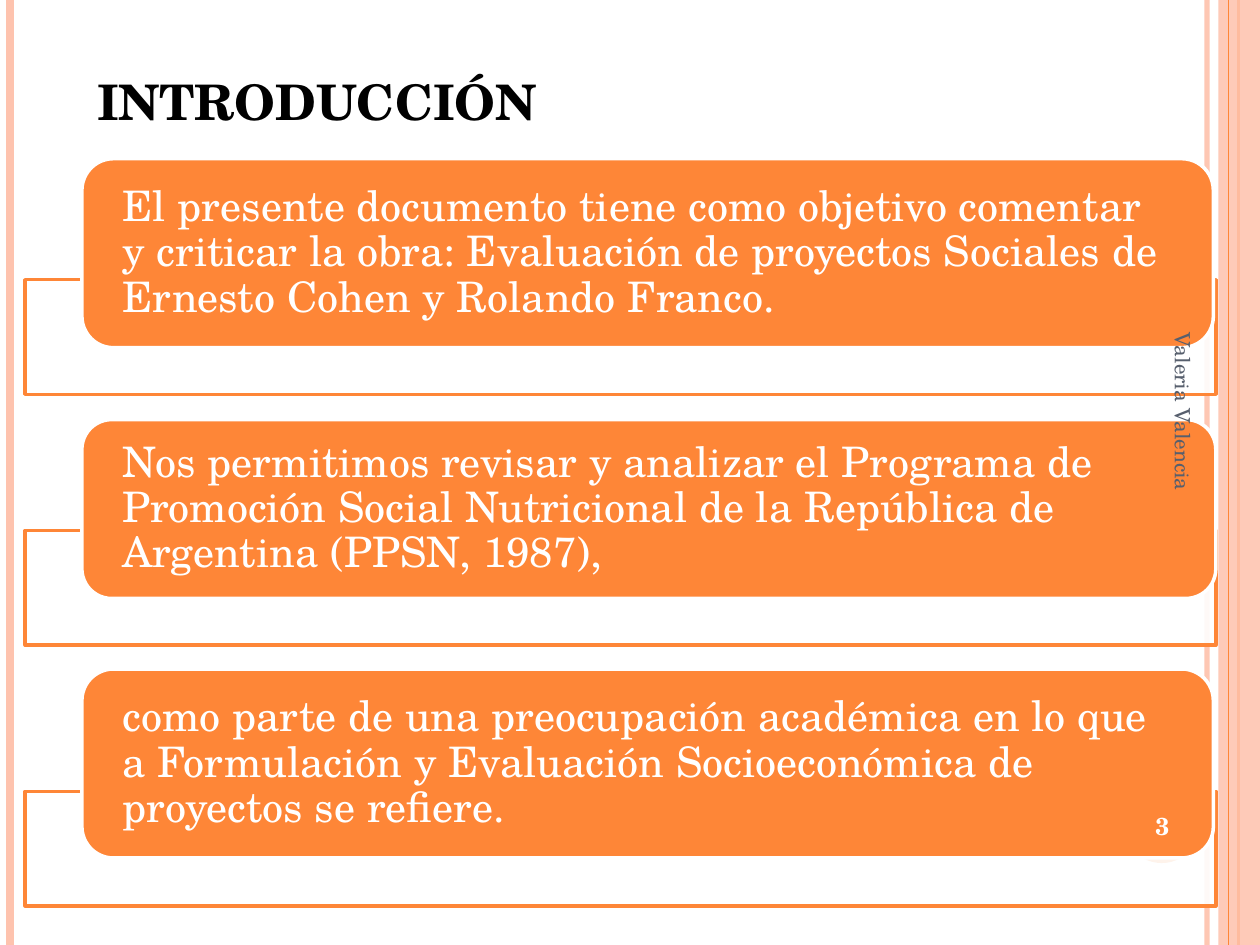
from typing import NamedTuple

from lxml.etree import SubElement
from pptx import Presentation
from pptx.dml.color import RGBColor
from pptx.enum.shapes import MSO_CONNECTOR, MSO_SHAPE
from pptx.enum.text import MSO_ANCHOR, PP_ALIGN
from pptx.oxml.ns import qn
from pptx.util import Inches, Pt

FONT = "TeX Gyre Schola"
ORANGE = RGBColor(0xFE, 0x86, 0x37)
PEACH = RGBColor(0xFE, 0xC3, 0xAE)
WHITE = RGBColor(0xFF, 0xFF, 0xFF)
BLACK = RGBColor(0, 0, 0)
SLATE = RGBColor(0x57, 0x5F, 0x6D)


class Rule(NamedTuple):
    x: float
    color: RGBColor
    width: float
    opacity: int = 100


class Statement(NamedTuple):
    frame_top: float
    left: float
    top: float
    width: float
    height: float
    text: str


RULES = [
    Rule(9.58, PEACH, 3, 93),
    Rule(0.08, PEACH, 4.5),
    Rule(9.83, ORANGE, 1.5),
]
INNER_RULE = Rule(9.75, ORANGE, 0.75)

STATEMENTS = [
    Statement(2.22, 0.65, 1.26, 8.98, 1.5,
              "El presente documento tiene como objetivo comentar y criticar la obra: "
              "Evaluación de proyectos Sociales de Ernesto Cohen y Rolando Franco."),
    Statement(4.21, 0.65, 3.33, 9, 1.42,
              "Nos permitimos revisar y analizar el Programa de Promoción Social "
              "Nutricional de la República de Argentina (PPSN, 1987),"),
    Statement(6.28, 0.65, 5.31, 8.98, 1.5,
              "como parte de una preocupación académica en lo que a Formulación y "
              "Evaluación Socioeconómica de proyectos se refiere."),
]


def set_opacity(element, percent: int) -> None:
    """Add an alpha value to the first solid colour inside an element."""
    color = element.find(".//" + qn("a:srgbClr"))
    SubElement(color, qn("a:alpha"), val=str(percent * 1000))


def add_rule(slide, rule: Rule) -> None:
    connector = slide.shapes.add_connector(
        MSO_CONNECTOR.STRAIGHT, Inches(rule.x), 0, Inches(rule.x), Inches(7.5))
    connector.line.color.rgb = rule.color
    connector.line.width = Pt(rule.width)
    properties = connector._element.spPr
    if rule.opacity < 100:
        set_opacity(properties, rule.opacity)
    SubElement(properties, qn("a:effectLst"))


def add_block(slide, kind: MSO_SHAPE, box: tuple, fill: RGBColor,
              line: RGBColor | None = None, opacity: int = 100):
    shape = slide.shapes.add_shape(kind, *map(Inches, box))
    shape.shadow.inherit = False
    shape.fill.solid()
    shape.fill.fore_color.rgb = fill
    if opacity < 100:
        set_opacity(shape._element.spPr, opacity)
    if line is None:
        shape.line.fill.background()
    else:
        shape.line.color.rgb = line
        shape.line.width = Pt(2)
    return shape


def write(shape, text: str, size: float, color: RGBColor, bold: bool = False,
          align: PP_ALIGN = PP_ALIGN.LEFT, anchor: MSO_ANCHOR = MSO_ANCHOR.MIDDLE):
    frame = shape.text_frame
    frame.word_wrap = True
    frame.vertical_anchor = anchor
    paragraph = frame.paragraphs[0]
    paragraph.alignment = align
    run = paragraph.add_run()
    run.text = text
    run.font.name = FONT
    run.font.size = Pt(size)
    run.font.bold = bold
    run.font.color.rgb = color
    return paragraph


def add_statement(slide, statement: Statement) -> None:
    add_block(slide, MSO_SHAPE.RECTANGLE, (0.2, statement.frame_top, 9.45, 0.91),
              WHITE, ORANGE, 90)
    card = add_block(slide, MSO_SHAPE.ROUNDED_RECTANGLE, statement[1:5], ORANGE, WHITE)
    frame = card.text_frame
    frame.margin_left = frame.margin_right = Inches(0.25)
    frame.margin_top = frame.margin_bottom = 0
    paragraph = write(card, statement.text, 24, WHITE)
    paragraph.line_spacing = 0.9


def main() -> None:
    presentation = Presentation()
    presentation.slide_width = Inches(10)
    presentation.slide_height = Inches(7.5)
    slide = presentation.slides.add_slide(presentation.slide_layouts[5])

    # Side decoration
    for rule in RULES:
        add_rule(slide, rule)
    add_block(slide, MSO_SHAPE.RECTANGLE, (9.67, 0, 0.33, 7.5), PEACH, opacity=87)
    add_rule(slide, INNER_RULE)
    add_block(slide, MSO_SHAPE.OVAL, (8.92, 6.25, 0.6, 0.6), ORANGE)

    # Statement cards over their outlined frames
    for statement in STATEMENTS:
        add_statement(slide, statement)

    # Title
    title = slide.shapes.title
    title.left, title.top = Inches(0.67), Inches(0.52)
    title.width, title.height = Inches(3.94), Inches(0.57)
    write(title, "INTRODUCCIÓN", 28, BLACK, bold=True, anchor=MSO_ANCHOR.TOP)

    # Slide number and vertical footer
    number = slide.shapes.add_textbox(*map(Inches, (8.89, 6.27, 0.67, 0.57)))
    write(number, "3", 14, WHITE, bold=True, align=PP_ALIGN.CENTER)
    footer = slide.shapes.add_textbox(*map(Inches, (7.64, 4.09, 3.5, 0.4)))
    footer.rotation = 90
    write(footer, "Valeria Valencia", 12, SLATE)

    presentation.save("out.pptx")


if __name__ == "__main__":
    main()
